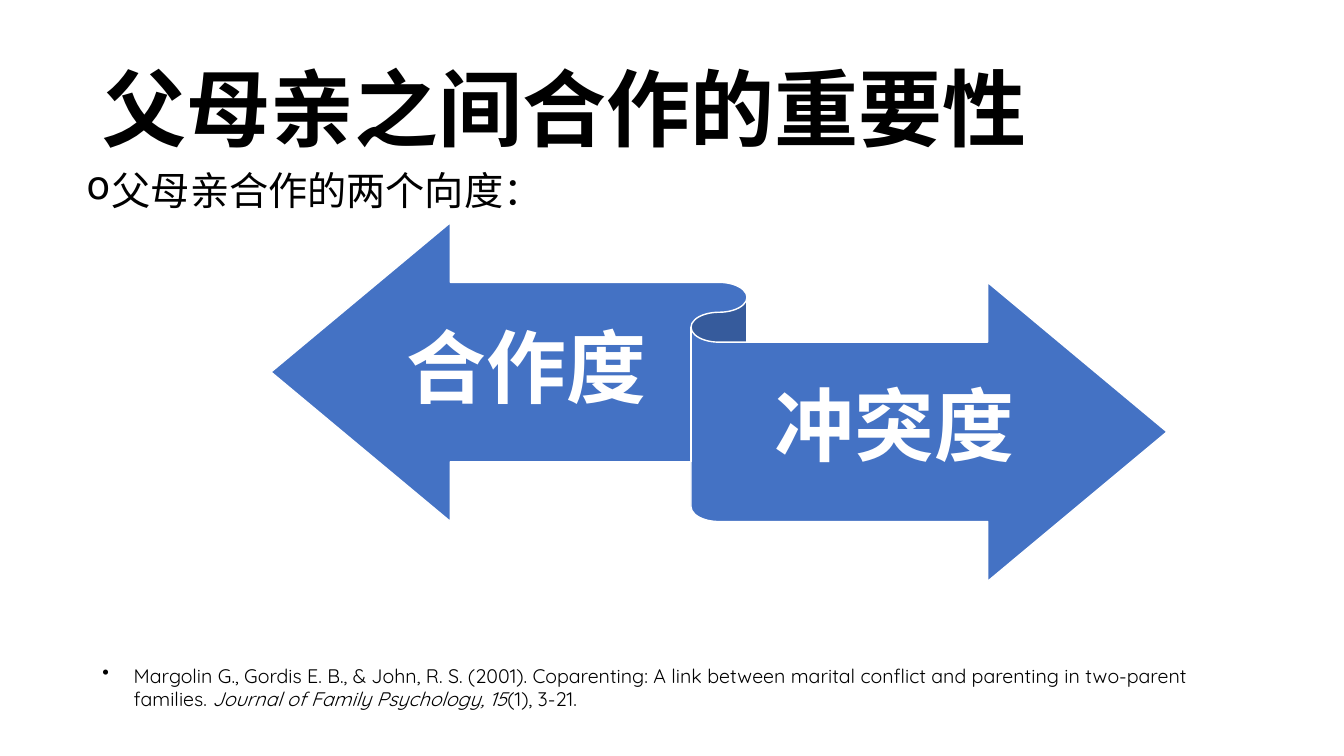
from lxml import etree
from pptx import Presentation
from pptx.dml.color import RGBColor
from pptx.enum.shapes import MSO_SHAPE
from pptx.enum.text import MSO_ANCHOR, PP_ALIGN
from pptx.oxml.ns import qn
from pptx.util import Cm, Pt

RIBBON = MSO_SHAPE.LEFT_RIGHT_RIBBON
TOP, MIDDLE = MSO_ANCHOR.TOP, MSO_ANCHOR.MIDDLE
LEFT, CENTER = PP_ALIGN.LEFT, PP_ALIGN.CENTER
CJK, LATIN = "Noto Sans CJK SC", "Quicksand"


def color(hex_string):
    return RGBColor.from_string(hex_string)


def add_text(box, *runs, size, font=CJK, fill="000000", bold=False, italic=(),
             align=LEFT, anchor=TOP, insets=(0.25, 0.13, 0.25, 0.13),
             spacing=None, before=0, after=0, bullet=None, indent=0):
    """Add a text box; box and insets are in cm, italic holds run indexes."""
    tf = s.shapes.add_textbox(*map(Cm, box)).text_frame
    tf.word_wrap = True
    tf.vertical_anchor = anchor
    tf.margin_left, tf.margin_top, tf.margin_right, tf.margin_bottom = map(Cm, insets)
    p = tf.paragraphs[0]
    p.alignment = align
    p.line_spacing = spacing
    p.space_before, p.space_after = Pt(before), Pt(after)
    if bullet:
        pPr = p._p.get_or_add_pPr()
        pPr.set("marL", str(Cm(indent)))
        pPr.set("indent", str(-Cm(indent)))
        etree.SubElement(pPr, qn("a:buChar"), char=bullet)
    for i, text in enumerate(runs):
        r = p.add_run()
        r.text = text
        r.font.size, r.font.bold, r.font.italic = Pt(size), bold, i in italic
        r.font.color.rgb = color(fill)
        r.font.name = font
        etree.SubElement(r._r.get_or_add_rPr(), qn("a:ea"), typeface=font)


prs = Presentation()
prs.slide_width, prs.slide_height = Cm(33.87), Cm(19.05)
s = prs.slides.add_slide(prs.slide_layouts[6])

# Reference
add_text((2.33, 16.59, 29.21, 1.45),
         "Margolin G., Gordis E. B., & John, R. S. (2001). Coparenting: A link between "
         "marital conflict and parenting in two-parent families. ",
         "Journal of Family Psychology, 15", "(1), 3-21.",
         size=14, font=LATIN, italic=(1,), bullet="•", indent=0.79)

# Two-way ribbon
sp = s.shapes.add_shape(RIBBON, Cm(6.83), Cm(5.61), Cm(22.58), Cm(9.04))
sp.shadow.inherit = False
sp.fill.solid()
sp.fill.fore_color.rgb = color("4472C4")
sp.line.color.rgb = color("FFFFFF")
sp.line.width = Pt(1)

# Ribbon labels
for label, left, top, width in (("合作度", 9.55, 7.19, 7.44),
                                ("冲突度", 18.14, 8.64, 8.81)):
    add_text((left, top, width, 4.42), label, size=57, fill="FFFFFF", bold=True,
             align=CENTER, anchor=MIDDLE, insets=(0, 0.56, 0, 0.61),
             spacing=0.9, after=20)

# Title and lead line
add_text((2.33, 1.02, 29.21, 3.68), "父母亲之间合作的重要性",
         size=60, bold=True, anchor=MIDDLE, spacing=0.9)
add_text((1.93, 4.19, 29.21, 1.57), "父母亲合作的两个向度：",
         size=28, spacing=0.9, before=10, bullet="o", indent=0.64)

prs.save("out.pptx")
